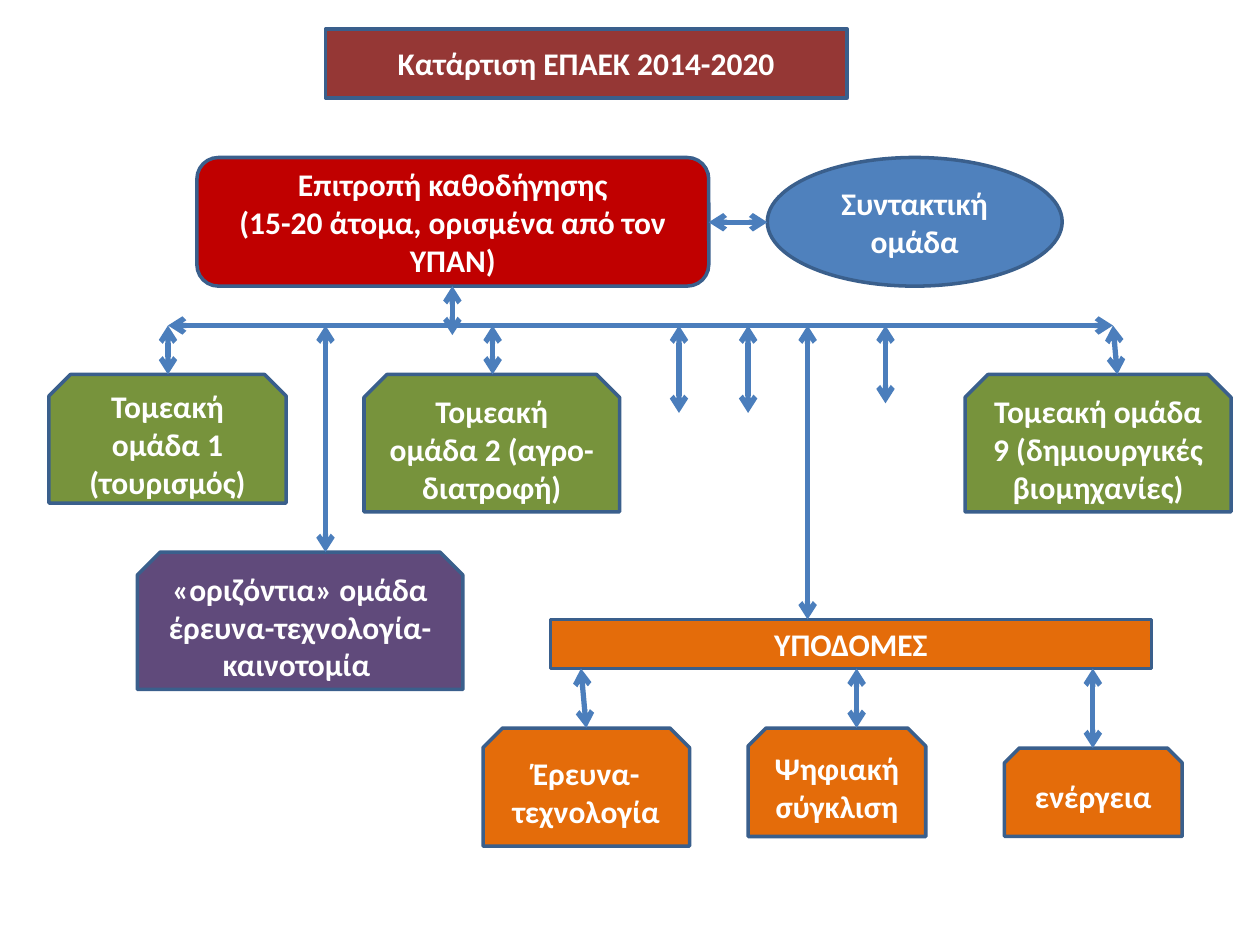
"""Build the organisation chart for preparing the EPAEK 2014-2020 programme."""
import lxml.etree
import pptx
import pptx.dml.color
import pptx.enum.shapes
import pptx.enum.text
import pptx.oxml.ns
import pptx.util

Pt = pptx.util.Pt
SHAPE = pptx.enum.shapes.MSO_SHAPE
SNIPPED = SHAPE.SNIP_2_SAME_RECTANGLE
GREEN, ORANGE = "77933C", "E46C0A"
BUS, GROUP_TOP, INFRA_TOP, INFRA_BOTTOM = 186, 214, 354, 382


def color(value):
    return pptx.dml.color.RGBColor.from_string(value)


def write(box, text, fill, size=18, font="Calibri", ink="FFFFFF", outline="3A5F8C"):
    box.fill.solid()
    box.fill.fore_color.rgb = color(fill)
    box.line.color.rgb = color(outline)
    box.line.width = Pt(2)
    frame = box.text_frame
    frame.word_wrap = True
    frame.auto_size = pptx.enum.text.MSO_AUTO_SIZE.NONE
    frame.vertical_anchor = pptx.enum.text.MSO_ANCHOR.MIDDLE
    frame.text = text
    for para in frame.paragraphs:
        para.alignment = pptx.enum.text.PP_ALIGN.CENTER
        for span in para.runs:
            span.font.name = font
            span.font.size = Pt(size)
            span.font.bold = True
            span.font.color.rgb = color(ink)


deck = pptx.Presentation()
deck.slide_width, deck.slide_height = Pt(720), Pt(540)
page = deck.slides.add_slide(deck.slide_layouts[5])

title = page.shapes.title
title.left, title.top, title.width, title.height = Pt(186), Pt(16.5), Pt(298), Pt(39.5)
write(title, "Κατάρτιση ΕΠΑΕΚ 2014-2020", "953735")

boxes = [
    (SHAPE.ROUNDED_RECTANGLE, 112.5, 90, 292.5, 73.5, "C00000",
     "Επιτροπή καθοδήγησης\n(15-20 άτομα, ορισμένα από τον ΥΠΑΝ)"),
    (SHAPE.OVAL, 438.5, 90, 168.5, 73.5, "4F81BD", "Συντακτική ομάδα"),
    (SNIPPED, 28, GROUP_TOP, 135.5, 73.5, GREEN, "Τομεακή ομάδα 1 (τουρισμός)"),
    (SNIPPED, 208, GROUP_TOP, 146, 78.5, GREEN, "Τομεακή ομάδα 2 (αγρο-διατροφή)"),
    (SNIPPED, 551.5, GROUP_TOP, 152, 78.5, GREEN,
     "Τομεακή ομάδα 9 (δημιουργικές βιομηχανίες)"),
    (SNIPPED, 78.5, 315.5, 186, 78.5, "604A7B",
     "«οριζόντια» ομάδα έρευνα-τεχνολογία-καινοτομία "),
    (SHAPE.RECTANGLE, 314.5, INFRA_TOP, 343.5, 28, ORANGE, "ΥΠΟΔΟΜΕΣ"),
    (SNIPPED, 276, 416, 118, 67.5, ORANGE, "Έρευνα-τεχνολογία"),
    (SNIPPED, 427.5, 416, 101.5, 62, ORANGE, "Ψηφιακή σύγκλιση"),
    (SNIPPED, 574, 427.5, 101.5, 50.5, ORANGE, "ενέργεια"),
]
for kind, left, top, width, height, fill, text in boxes:
    box = page.shapes.add_shape(kind, Pt(left), Pt(top), Pt(width), Pt(height))
    box.shadow.inherit = False
    write(box, text, fill)

bus_drops = [(96, GROUP_TOP), (186, 315.5), (281.5, GROUP_TOP), (388, 236),
             (427.5, 236), (461.5, INFRA_TOP), (506, 230.5)]
arrows = [(x, BUS, x, bottom) for x, bottom in bus_drops] + [
    (405, 127, 438.5, 127),
    (96, BUS, 636, BUS),
    (636, BUS, 638.5, GROUP_TOP),
    (258.5, 163.5, 258.5, 191.5),
    (332, INFRA_BOTTOM, 335, 416),
    (489.5, INFRA_BOTTOM, 489.5, 416),
    (624.5, INFRA_BOTTOM, 624.5, 427.5),
]
for ends in arrows:
    arrow = page.shapes.add_connector(
        pptx.enum.shapes.MSO_CONNECTOR.STRAIGHT, *[Pt(value) for value in ends])
    arrow.line.color.rgb = color("4B7EBC")
    arrow.line.width = Pt(3)
    outline = arrow.line._get_or_add_ln()
    for tag in ("a:headEnd", "a:tailEnd"):
        lxml.etree.SubElement(outline, pptx.oxml.ns.qn(tag), type="arrow")
    lxml.etree.SubElement(arrow._element.spPr, pptx.oxml.ns.qn("a:effectLst"))

deck.save("out.pptx")
